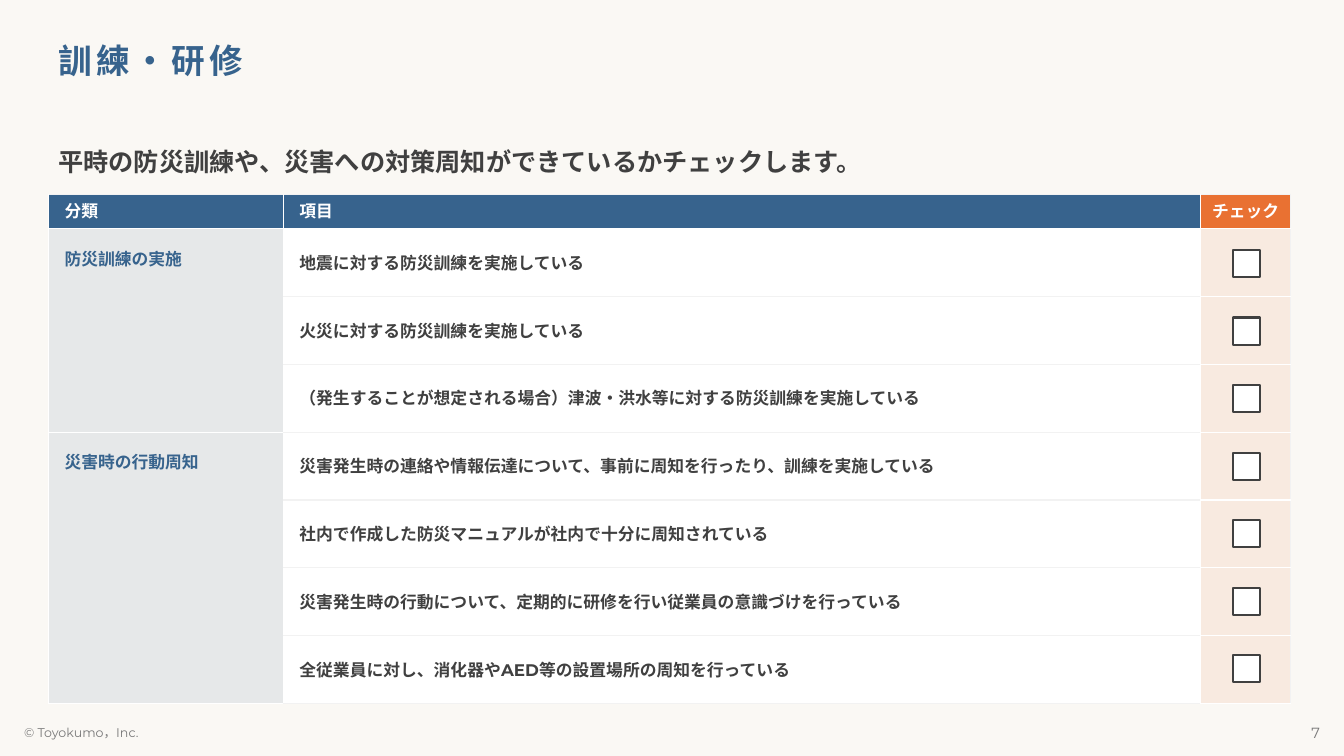
from pptx import Presentation
from pptx.util import Inches, Pt
from pptx.dml.color import RGBColor
from pptx.enum.shapes import MSO_SHAPE
from pptx.enum.text import MSO_ANCHOR, PP_ALIGN
from pptx.oxml.ns import qn
from lxml.etree import SubElement

TITLE = "訓練・研修"
LEAD = "平時の防災訓練や、災害への対策周知ができているかチェックします。"
HEADS = ["分類", "項目", "チェック"]
GROUPS = [
    ("防災訓練の実施", [
        "地震に対する防災訓練を実施している",
        "火災に対する防災訓練を実施している",
        "（発生することが想定される場合）津波・洪水等に対する防災訓練を実施している",
    ]),
    ("災害時の行動周知", [
        "災害発生時の連絡や情報伝達について、事前に周知を行ったり、訓練を実施している",
        "社内で作成した防災マニュアルが社内で十分に周知されている",
        "災害発生時の行動について、定期的に研修を行い従業員の意識づけを行っている",
        "全従業員に対し、消化器やAED等の設置場所の周知を行っている",
    ]),
]
FOOTER = "© Toyokumo，Inc."
PAGE = "7"

FONT = "Montserrat"
COLORS = {"back": "FAF8F4", "blue": "37638D", "orange": "E97132", "dark": "404040",
          "grey": "797979", "white": "FFFFFF", "pale": "F2F2F2"}
LEFT, TOP = 0.48, 1.93
WIDTHS = [2.33, 9.1, 0.89]
HEAD, TOTAL = 0.34, 5.05
BOX, STEP = 0.27, 0.67
HEAD_PAD = (0.16, 0.05, 0.1, 0.05)
GROUP_PAD = (0.16, 0.2, 0.01, 0)
ITEM_PAD = (0.16, 0.01, 0.01, 0)
PLAIN_PAD = (0.1, 0.05, 0.1, 0.05)


def rgb(name):
    return RGBColor.from_string(COLORS[name])


def style(para, text, size, color, bold=False, align=PP_ALIGN.LEFT, gap=None):
    para.text = text
    para.alignment = align
    for run in para.runs:
        font = run.font
        font.size, font.bold, font.name = Pt(size), bold, FONT
        font.color.rgb = rgb(color)
        SubElement(font._element, qn("a:ea")).set("typeface", FONT)
        if gap:
            font._element.set("spc", str(gap * 100))


def label(slide, area, text, size, color, pad=PLAIN_PAD, **more):
    frame = slide.shapes.add_textbox(*map(Inches, area)).text_frame
    frame.word_wrap = True
    frame.vertical_anchor = MSO_ANCHOR.MIDDLE
    frame.margin_left, frame.margin_top, frame.margin_right, frame.margin_bottom = map(Inches, pad)
    style(frame.paragraphs[0], text, size, color, **more)
    return frame.paragraphs[0]


def paint(cell, color, edges, alpha=None):
    props = cell._tc.get_or_add_tcPr()
    for side, edge in zip("LTRB", edges):
        line = SubElement(props, qn("a:ln" + side), w=str(Pt(1)))
        fill = SubElement(line, qn("a:solidFill"))
        SubElement(fill, qn("a:srgbClr"), val=COLORS[edge])
    cell.fill.solid()
    cell.fill.fore_color.rgb = rgb(color)
    if alpha:
        tint = props.find(qn("a:solidFill")).find(qn("a:srgbClr"))
        SubElement(tint, qn("a:alpha"), val=str(alpha * 1000))


def write(cell, text, color, pad, anchor=MSO_ANCHOR.MIDDLE, align=PP_ALIGN.LEFT):
    cell.margin_left, cell.margin_top, cell.margin_right, cell.margin_bottom = map(Inches, pad)
    cell.vertical_anchor = anchor
    style(cell.text_frame.paragraphs[0], text, 12, color, True, align)


def fill_table(slide):
    items = [item for _, group in GROUPS for item in group]
    table = slide.shapes.add_table(
        len(items) + 1, 3, Inches(LEFT), Inches(TOP),
        Inches(sum(WIDTHS)), Inches(TOTAL)).table
    table.first_row = table.horz_banding = False
    for col, width in zip(table.columns, WIDTHS):
        col.width = Inches(width)
    for row in table.rows:
        row.height = Inches((TOTAL - HEAD) / len(items))
    table.rows[0].height = Inches(HEAD)

    for col, head in enumerate(HEADS):
        cell = table.cell(0, col)
        last = col == 2
        end = "pale" if last else "white"
        paint(cell, "orange" if last else "blue", ("white", "pale", end, end))
        write(cell, head, "white", PLAIN_PAD if last else HEAD_PAD,
              align=PP_ALIGN.CENTER if last else PP_ALIGN.LEFT)

    for row, item in enumerate(items, 1):
        group, cell, check = (table.cell(row, col) for col in range(3))
        paint(group, "blue", ["white"] * 4, 10)
        paint(cell, "white", ("white", "white" if row == 1 else "pale", "white", "pale"))
        write(cell, item, "dark", ITEM_PAD)
        paint(check, "orange", ("white", "white", "pale", "white"), 10)

    row = 1
    for name, group in GROUPS:
        cell = table.cell(row, 0)
        cell.merge(table.cell(row + len(group) - 1, 0))
        write(cell, name, "blue", GROUP_PAD, MSO_ANCHOR.TOP)
        row += len(group)
    return len(items)


def add_boxes(slide, count):
    for spot in range(count):
        box = slide.shapes.add_shape(
            MSO_SHAPE.ROUNDED_RECTANGLE, Inches(12.23), Inches(2.48 + spot * STEP),
            Inches(BOX), Inches(BOX))
        box.adjustments[0] = 0
        box.shadow.inherit = False
        box.fill.solid()
        box.fill.fore_color.rgb = rgb("white")
        box.line.color.rgb = rgb("dark")
        box.line.width = Pt(1.5)


def main():
    deck = Presentation()
    deck.slide_width, deck.slide_height = Inches(13.33), Inches(7.5)
    slide = deck.slides.add_slide(deck.slide_layouts[6])
    slide.background.fill.solid()
    slide.background.fill.fore_color.rgb = rgb("back")

    title = label(slide, (LEFT, 0.28, 12.33, 0.66), TITLE, 24, "blue",
                  (0.1, 0.08, 0.1, 0.05), bold=True, gap=3)
    title.line_spacing = 0.9
    label(slide, (0.14, 7.13, 3.92, 0.27), FOOTER, 9, "grey")
    label(slide, (10.19, 7.13, 3, 0.27), PAGE, 10.5, "grey", align=PP_ALIGN.RIGHT)
    label(slide, (LEFT, 1.27, 12.36, 0.66), LEAD, 18, "dark", bold=True)
    add_boxes(slide, fill_table(slide))
    deck.save("out.pptx")


if __name__ == "__main__":
    main()
